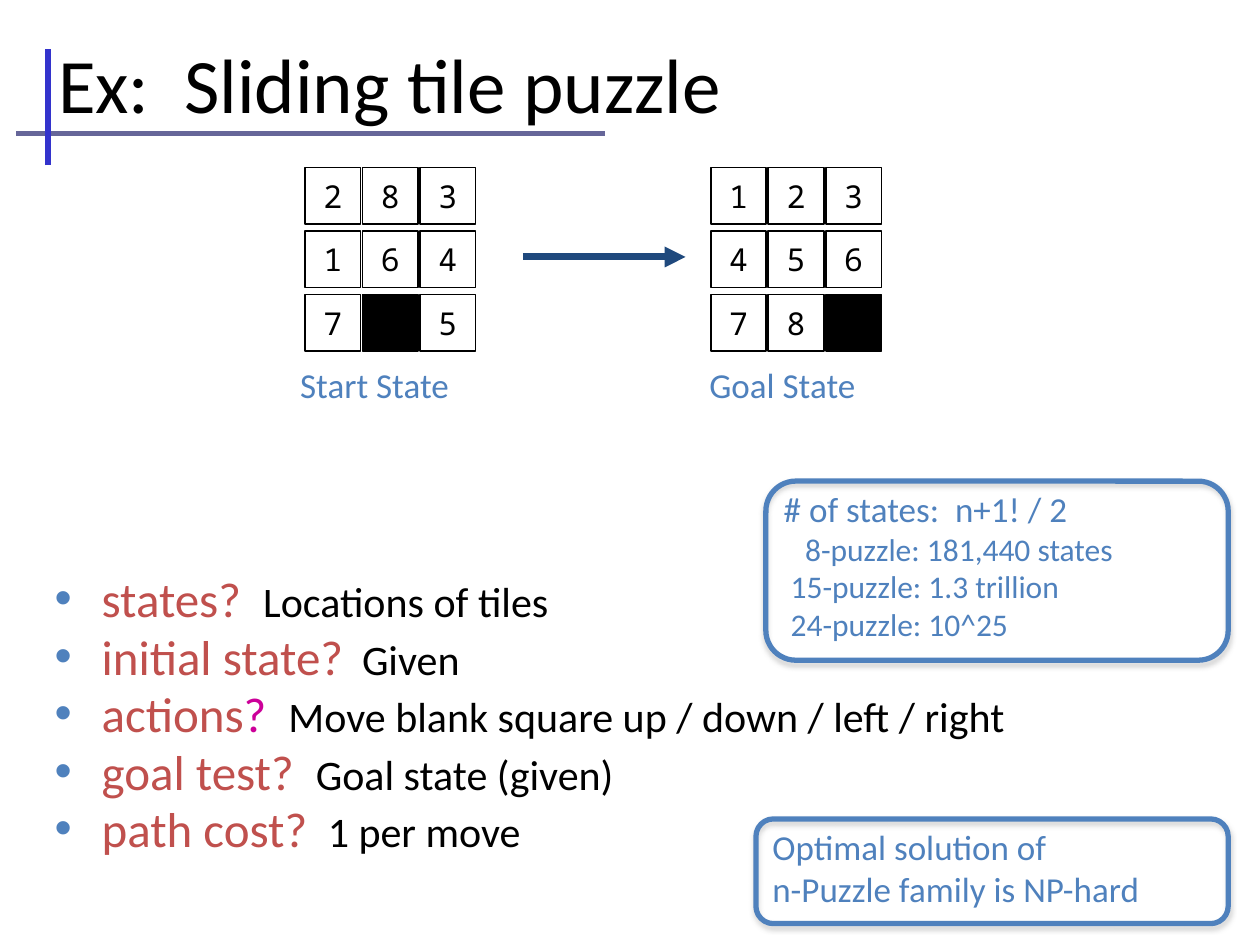
from lxml import etree
from pptx import Presentation
from pptx import util as u
from pptx.dml.color import RGBColor
from pptx.enum import shapes, text
from pptx.oxml.ns import qn

Cm, Pt = u.Cm, u.Pt
BLUE, RED, BLACK, WHITE = "4F81BD", "C0504D", "000000", "FFFFFF"


def rgb(code):
    return RGBColor.from_string(code)


def frame(shape, anchor=text.MSO_ANCHOR.TOP):
    """Give a shape's text small even margins and wrapping."""
    tf = shape.text_frame
    tf.word_wrap = True
    tf.vertical_anchor = anchor
    tf.margin_left = tf.margin_right = tf.margin_top = tf.margin_bottom = Cm(0.13)
    return tf


prs = Presentation()
prs.slide_width, prs.slide_height = Cm(25.4), Cm(19.05)
slide = prs.slides.add_slide(prs.slide_layouts[5])
parts = slide.shapes

# Title
title = parts.title
title.left, title.top, title.width, title.height = Cm(1.04), Cm(0.25), Cm(22.66), Cm(2.84)
tf = frame(title, text.MSO_ANCHOR.MIDDLE)
tf.text = "Ex:  Sliding tile puzzle"
par = tf.paragraphs[0]
par.alignment = text.PP_ALIGN.LEFT
par.font.size, par.font.name = Pt(44), "Calibri"
par.font.color.rgb = rgb(BLACK)

# Title rules and the arrow between the boards
rules = [
    (0.33, 2.69, 12.19, 2.69, "666699", 3, False),
    (0.97, 3.33, 0.97, 0.99, "3333CC", 3, False),
    (10.54, 5.18, 13.82, 5.18, "1F497D", 4, True),
]
for x1, y1, x2, y2, color, width, arrow in rules:
    rule = parts.add_connector(shapes.MSO_CONNECTOR.STRAIGHT, Cm(x1), Cm(y1), Cm(x2), Cm(y2))
    rule.line.color.rgb = rgb(color)
    rule.line.width = Pt(width)
    if arrow:
        etree.SubElement(rule.line._get_or_add_ln(), qn("a:tailEnd"), type="triangle")
    etree.SubElement(rule._element.spPr, qn("a:effectLst"))

# Boards: a space marks the blank square
boards = [
    (6.15, ["283", "164", "7 5"], 5.92, "Start State"),
    (14.33, ["123", "456", "78 "], 14.17, "Goal State"),
]
for left, rows, side, name in boards:
    for i, row in enumerate(rows):
        for j, digit in enumerate(row):
            tile = parts.add_shape(shapes.MSO_SHAPE.RECTANGLE, Cm(left + 1.16 * j),
                                   Cm(3.38 + 1.28 * i), Cm(1.12), Cm(1.14))
            tile.shadow.inherit = False
            tile.fill.solid()
            tile.fill.fore_color.rgb = rgb(BLACK if digit == " " else WHITE)
            tile.line.color.rgb = rgb(BLACK)
            tile.line.width = Pt(1)
            if digit != " ":
                tf = frame(tile, text.MSO_ANCHOR.MIDDLE)
                tf.text = digit
                par = tf.paragraphs[0]
                par.alignment = text.PP_ALIGN.CENTER
                par.font.size, par.font.name = Pt(18), "Noto Sans Mono"
                par.font.color.rgb = rgb(BLACK)
    label = parts.add_textbox(Cm(side), Cm(7.19), Cm(3.7), Cm(1.07))
    tf = frame(label)
    tf.text = name
    par = tf.paragraphs[0]
    par.font.size, par.font.name = Pt(20), "Calibri"
    par.font.color.rgb = rgb(BLUE)

# Problem formulation
items = [
    [("states?  ", 28, RED), ("Locations of tiles", 24, BLACK)],
    [("initial state?", 28, RED), ("  Given", 24, BLACK)],
    [("actions", 28, RED), ("?  ", 28, "CC0099"),
     ("Move blank square up / down / left / right", 24, BLACK)],
    [("goal test?  ", 28, RED), ("Goal state (given)", 24, BLACK)],
    [("path cost? ", 28, RED), (" 1 per move", 24, BLACK)],
]
tf = frame(parts.add_textbox(Cm(0.97), Cm(11.56), Cm(24.13), Cm(6.2)))
for i, item in enumerate(items):
    par = tf.paragraphs[0] if i == 0 else tf.add_paragraph()
    par.line_spacing = 0.8
    if i:
        par.space_before = Pt(6)
    props = par._p.get_or_add_pPr()
    props.set("marL", str(Cm(0.95)))
    props.set("indent", str(-Cm(0.95)))
    tint = etree.SubElement(props, qn("a:buClr"))
    etree.SubElement(tint, qn("a:srgbClr"), val=BLUE)
    etree.SubElement(props, qn("a:buFont"), typeface="Arial")
    etree.SubElement(props, qn("a:buChar"), char="•")
    for words, size, color in item:
        run = par.add_run()
        run.text = words
        run.font.size, run.font.name = Pt(size), "Calibri"
        run.font.color.rgb = rgb(color)

# Notes: frame, text place and width, then lines as (words, size, indent)
notes = [
    ((15.44, 9.7, 9.32, 3.61), 15.67, 9.32,
     [("# of states:  n+1! / 2", 20, 0), ("8-puzzle: 181,440 states", 18, 0.43),
      ("15-puzzle: 1.3 trillion", 18, 0.14), ("24-puzzle: 10^25", 18, 0.14)]),
    ((15.24, 16.51, 9.52, 2.11), 15.44, 9.09,
     [("Optimal solution of", 20, 0), ("n-Puzzle family is NP-hard", 20, 0)]),
]
for box, left, width, lines in notes:
    card = parts.add_shape(shapes.MSO_SHAPE.ROUNDED_RECTANGLE, *map(Cm, box))
    card.shadow.inherit = False
    card.fill.background()
    card.line.color.rgb = rgb(BLUE)
    card.line.width = Pt(3)
    shade = etree.SubElement(card._element.spPr.find(qn("a:effectLst")), qn("a:outerShdw"),
                             blurRad=str(Pt(3)), dist=str(Pt(1.8)), dir="5400000", rotWithShape="0")
    tint = etree.SubElement(shade, qn("a:srgbClr"), val="808080")
    etree.SubElement(tint, qn("a:alpha"), val="35000")

    tf = frame(parts.add_textbox(Cm(left), Cm(box[1]), Cm(width), Cm(box[3])))
    tf.text = "\n".join(line[0] for line in lines)
    for par, (words, size, indent) in zip(tf.paragraphs, lines):
        par._p.get_or_add_pPr().set("marL", str(Cm(indent)))
        par.font.size, par.font.name = Pt(size), "Calibri"
        par.font.color.rgb = rgb(BLUE)

prs.save("out.pptx")
